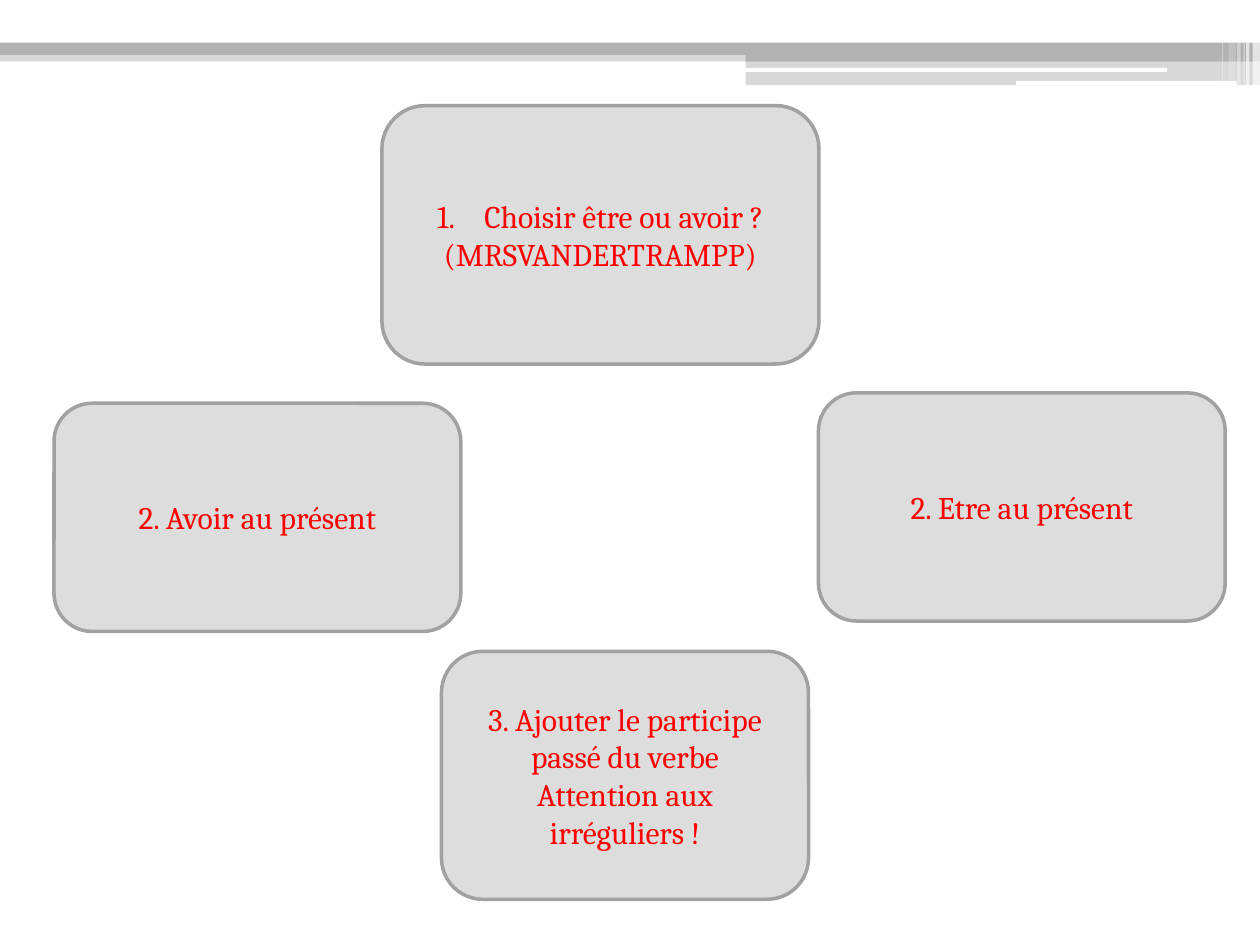
from dataclasses import dataclass

from lxml.etree import SubElement
from pptx import Presentation
from pptx.dml.color import RGBColor
from pptx.enum.shapes import MSO_SHAPE as Shape
from pptx.enum.text import MSO_ANCHOR, PP_ALIGN
from pptx.oxml.ns import qn
from pptx.util import Cm, Pt

COLORS = {"band": "B2B2B2", "white": "FFFFFF", "card": "DDDDDD",
          "border": "A1A1A1", "text": "FF0000"}
FONT = "Cambria"
PADDING = Cm(0.16)
NUMBER_INDENT = Cm(0.95)


@dataclass
class Bar:
    left: float
    top: float
    width: float
    height: float
    color: str
    opacity: int = 100
    kind: Shape = Shape.RECTANGLE


@dataclass
class Card:
    left: float
    top: float
    width: float
    height: float
    lines: list[str]
    numbered: bool = False


BARS = [
    Bar(0, 1.02, 25.4, 0.22, "band", 50),
    Bar(0, 0.86, 25.4, 0.25, "band"),
    Bar(15.03, 0.99, 10.37, 0.25, "band"),
    Bar(15.03, 1.23, 10.37, 0.49, "band", 50),
    Bar(15.02, 1.37, 8.51, 0.08, "white", kind=Shape.ROUNDED_RECTANGLE),
    Bar(20.48, 1.63, 4.45, 0.1, "white", kind=Shape.ROUNDED_RECTANGLE),
]
# Vertical stripes over the right end: left, width, height, opacity
STRIPES = [
    (25.25, 0.15, 1.73, 65), (25.12, 0.07, 1.73, 65), (25.07, 0.02, 1.73, 60),
    (24.94, 0.07, 1.73, 40), (24.77, 0.14, 1.63, 20), (24.64, 0.02, 1.63, 30),
]
BARS += [Bar(x, 0, w, h, "white", a) for x, w, h, a in STRIPES]

CARDS = [
    Card(7.7, 2.13, 8.81, 5.21,
         ["Choisir être ou avoir ?", "(MRSVANDERTRAMPP)"], numbered=True),
    Card(1.09, 8.13, 8.2, 4.6, ["2. Avoir au présent"]),
    Card(16.5, 7.92, 8.2, 4.6, ["2. Etre au présent"]),
    Card(8.9, 13.13, 7.4, 5,
         ["3. Ajouter le participe passé du verbe",
          "Attention aux irréguliers !"]),
]


def rgb(name: str) -> RGBColor:
    return RGBColor.from_string(COLORS[name])


def add_filled(s, kind: Shape, item: Bar | Card, color: str):
    sp = s.shapes.add_shape(kind, Cm(item.left), Cm(item.top),
                            Cm(item.width), Cm(item.height))
    sp.shadow.inherit = False
    sp.fill.solid()
    sp.fill.fore_color.rgb = rgb(color)
    return sp


def add_bar(s, bar: Bar) -> None:
    sp = add_filled(s, bar.kind, bar, bar.color)
    sp.line.fill.background()
    if bar.opacity < 100:
        clr = sp._element.spPr.find(f"{qn('a:solidFill')}/{qn('a:srgbClr')}")
        SubElement(clr, qn("a:alpha"), val=str(bar.opacity * 1000))


def indent_as_list(p, bullet: bool) -> None:
    """Hang the paragraph like a list item, with an automatic number or none."""
    pPr = p._p.get_or_add_pPr()
    pPr.set("marL", str(NUMBER_INDENT))
    pPr.set("indent", str(-NUMBER_INDENT))
    if bullet:
        clr = SubElement(pPr, qn("a:buClr"))
        SubElement(clr, qn("a:srgbClr"), val=COLORS["text"])
        SubElement(pPr, qn("a:buFont"), typeface=FONT)
        SubElement(pPr, qn("a:buAutoNum"), type="arabicPeriod")
    else:
        SubElement(pPr, qn("a:buNone"))


def add_card(s, card: Card) -> None:
    sp = add_filled(s, Shape.ROUNDED_RECTANGLE, card, "card")
    sp.line.color.rgb = rgb("border")
    sp.line.width = Pt(2)
    tf = sp.text_frame
    tf.word_wrap = True
    tf.vertical_anchor = MSO_ANCHOR.MIDDLE
    tf.margin_left = tf.margin_right = PADDING
    tf.margin_top = tf.margin_bottom = PADDING
    for i, line in enumerate(card.lines):
        p = tf.add_paragraph() if i else tf.paragraphs[0]
        p.alignment = PP_ALIGN.CENTER
        if card.numbered:
            indent_as_list(p, bullet=i == 0)
        r = p.add_run()
        r.text = line
        r.font.name = FONT
        r.font.size = Pt(18)
        r.font.color.rgb = rgb("text")


def main() -> None:
    prs = Presentation()
    prs.slide_width, prs.slide_height = Cm(25.4), Cm(19.05)
    s = prs.slides.add_slide(prs.slide_layouts[6])
    for bar in BARS:
        add_bar(s, bar)
    for card in CARDS:
        add_card(s, card)
    prs.save("out.pptx")


if __name__ == "__main__":
    main()
